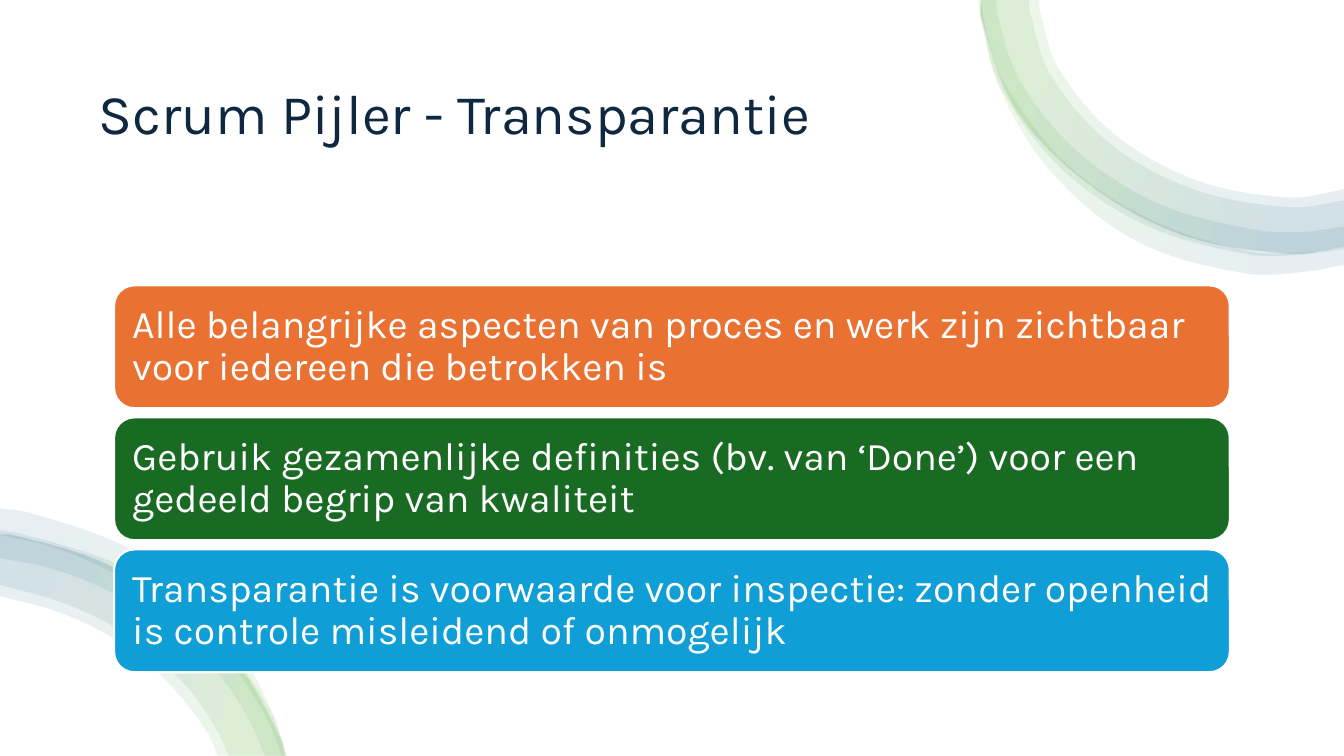
"""Builds the slide on transparency as a Scrum pillar."""
from dataclasses import dataclass
from math import dist

from lxml.etree import SubElement
from pptx import Presentation
from pptx.dml.color import RGBColor
from pptx.enum.shapes import MSO_SHAPE
from pptx.enum.text import MSO_ANCHOR, MSO_AUTO_SIZE, PP_ALIGN
from pptx.oxml.ns import qn
from pptx.shapes.base import BaseShape
from pptx.slide import Slide
from pptx.util import Pt

Point = tuple[float, float]

HUES = {
    "white": "FFFFFF", "navy": "0E2841", "orange": "E97132", "green": "196B24",
    "blue": "0F9ED5", "leaf": "4EA72E", "teal": "156082",
}
STOPS = [(16, "leaf"), (85, "teal")]
ALPHA = 10
FONT = "Karla"
TOP_TILT, LOW_TILT = 340, 160


@dataclass
class Band:
    """One translucent ring segment between two smooth edges."""
    outer: list[Point]
    inner: list[Point]
    tilt: int


@dataclass
class Card:
    """One coloured statement."""
    text: str
    hue: str


TOP_RIM = [(701, 0), (701, 14), (726, 79), (778, 132), (845, 168), (921, 181), (960, 176)]
LOW_RIM = [(203, 540), (199, 526), (169, 474), (125, 432), (69, 400), (8, 382), (0, 382)]

BANDS = [
    Band(TOP_RIM,
         [(960, 135), (921, 141), (855, 129), (796, 96), (756, 49), (743, 9), (742, 0)],
         TOP_TILT),
    Band(TOP_RIM,
         [(960, 143), (921, 148), (852, 135), (792, 102), (750, 53), (736, 10), (735, 0)],
         TOP_TILT),
    Band([(701, 0), (701, 13), (716, 64), (759, 121), (820, 161), (892, 181),
          (930, 181), (960, 177)],
         [(960, 161), (928, 165), (894, 163), (828, 145), (771, 109), (729, 58),
          (713, 12), (712, 0)],
         TOP_TILT),
    Band([(699, 0), (700, 9), (714, 63), (753, 125), (814, 173), (890, 195),
          (930, 194), (960, 189)],
         [(960, 176), (929, 180), (892, 179), (823, 157), (762, 117), (718, 60),
          (706, 27), (701, 0)],
         TOP_TILT),
    Band([(205, 540), (195, 510), (176, 473), (151, 440), (120, 410), (83, 387),
          (21, 366), (0, 363)],
         [(0, 382), (36, 390), (73, 405), (109, 425), (140, 449), (168, 478),
          (190, 512), (198, 531), (201, 540)],
         LOW_TILT),
    Band(LOW_RIM,
         [(0, 426), (38, 436), (72, 451), (103, 472), (128, 497), (148, 524), (155, 540)],
         LOW_TILT),
    Band([(204, 540), (200, 526), (193, 508), (171, 474), (144, 445), (112, 420),
          (76, 400), (17, 382), (0, 379)],
         [(0, 399), (32, 405), (68, 418), (100, 436), (131, 458), (158, 484),
          (178, 515), (189, 540)],
         LOW_TILT),
    Band(LOW_RIM,
         [(0, 418), (40, 429), (76, 445), (108, 467), (135, 493), (154, 521), (163, 540)],
         LOW_TILT),
]

CARDS = [
    Card("Alle belangrijke aspecten van proces en werk zijn zichtbaar "
         "voor iedereen die betrokken is", "orange"),
    Card("Gebruik gezamenlijke definities (bv. van ‘Done’) voor een "
         "gedeeld begrip van kwaliteit", "green"),
    Card("Transparantie is voorwaarde voor inspectie: zonder openheid "
         "is controle misleidend of onmogelijk", "blue"),
]


def rgb(hue: str) -> RGBColor:
    """Look up a named colour."""
    return RGBColor.from_string(HUES[hue])


def write(shape: BaseShape, text: str, *, size: float, hue: str, inset: float) -> None:
    """Put left-aligned text in a shape."""
    frame = shape.text_frame
    frame.word_wrap = True
    frame.auto_size = MSO_AUTO_SIZE.NONE
    frame.vertical_anchor = MSO_ANCHOR.MIDDLE
    frame.margin_left = frame.margin_right = Pt(inset)
    frame.margin_top = frame.margin_bottom = Pt(inset)
    line = frame.paragraphs[0]
    line.alignment = PP_ALIGN.LEFT
    line.line_spacing = 0.9
    run = line.add_run()
    run.text = text
    run.font.name = FONT
    run.font.size = Pt(size)
    run.font.color.rgb = rgb(hue)


def lean(knot: Point, prev: Point, after: Point, reach: float) -> Point:
    """Place a handle beside a knot, along the line from prev to after."""
    part = reach / dist(prev, after)
    return tuple(k + (b - a) * part for k, a, b in zip(knot, prev, after))


def curve(knots: list[Point]) -> list[list[Point]]:
    """Give two handles and an end for each piece of a smooth edge."""
    ends = [knots[0], *knots, knots[-1]]
    parts = []
    for a, b, c, d in zip(ends, ends[1:], ends[2:], ends[3:]):
        reach = dist(b, c) / 3
        parts.append([lean(b, a, c, reach), lean(c, b, d, -reach), c])
    return parts


def draw_band(slide: Slide, band: Band) -> None:
    """Draw a band with its faint gradient."""
    dots = [(Pt(x), Pt(y)) for x, y in band.outer + band.inner]
    pen = slide.shapes.build_freeform(*dots[0])
    pen.add_line_segments(dots[1:], close=True)
    shape = pen.convert_to_shape()
    shape.shadow.inherit = False
    shape.line.fill.background()
    shape.fill.gradient()
    shape.fill.gradient_angle = band.tilt
    stops = next(shape.element.iter(qn("a:gsLst")))
    for stop in list(stops):
        stops.remove(stop)
    for place, hue in STOPS:
        stop = SubElement(stops, qn("a:gs"), pos=str(place * 1000))
        tint = SubElement(stop, qn("a:srgbClr"), val=HUES[hue])
        SubElement(tint, qn("a:alpha"), val=str(ALPHA * 1000))
    trail = next(shape.element.iter(qn("a:path")))
    sides = list(trail.iter(qn("a:lnTo")))
    del sides[len(band.outer) - 1]
    for side, part in zip(sides, curve(band.outer) + curve(band.inner)):
        bend = SubElement(trail, qn("a:cubicBezTo"))
        for x, y in part:
            SubElement(bend, qn("a:pt"), x=str(Pt(x) - shape.left), y=str(Pt(y) - shape.top))
        trail.replace(side, bend)


def draw_block(slide: Slide, kind: MSO_SHAPE, hue: str, *box: float) -> BaseShape:
    """Draw a plain filled shape in a box of points."""
    shape = slide.shapes.add_shape(kind, *map(Pt, box))
    shape.shadow.inherit = False
    shape.fill.solid()
    shape.fill.fore_color.rgb = rgb(hue)
    shape.line.fill.background()
    return shape


def draw_card(slide: Slide, card: Card, top: float) -> None:
    """Draw one rounded statement card."""
    shape = draw_block(slide, MSO_SHAPE.ROUNDED_RECTANGLE, card.hue, 81.5, top, 797, 87.8)
    shape.line.color.rgb = rgb("white")
    shape.line.width = Pt(1.5)
    write(shape, card.text, size=28, hue="white", inset=8.7)


def main() -> None:
    """Build and save the slide."""
    deck = Presentation()
    deck.slide_width, deck.slide_height = Pt(960), Pt(540)
    slide = deck.slides.add_slide(deck.slide_layouts[5])
    title = slide.shapes.title
    sheet = draw_block(slide, MSO_SHAPE.RECTANGLE, "white", 0, 0, 960, 540)
    title.element.addprevious(sheet.element)
    title.left, title.top = Pt(63.4), Pt(36)
    title.width, title.height = Pt(833), Pt(93.6)
    write(title, "Scrum Pijler - Transparantie", size=40, hue="navy", inset=7.2)
    for band in BANDS:
        draw_band(slide, band)
    for row, card in enumerate(CARDS):
        draw_card(slide, card, 203.8 + row * 94.3)
    deck.save("out.pptx")


if __name__ == "__main__":
    main()
